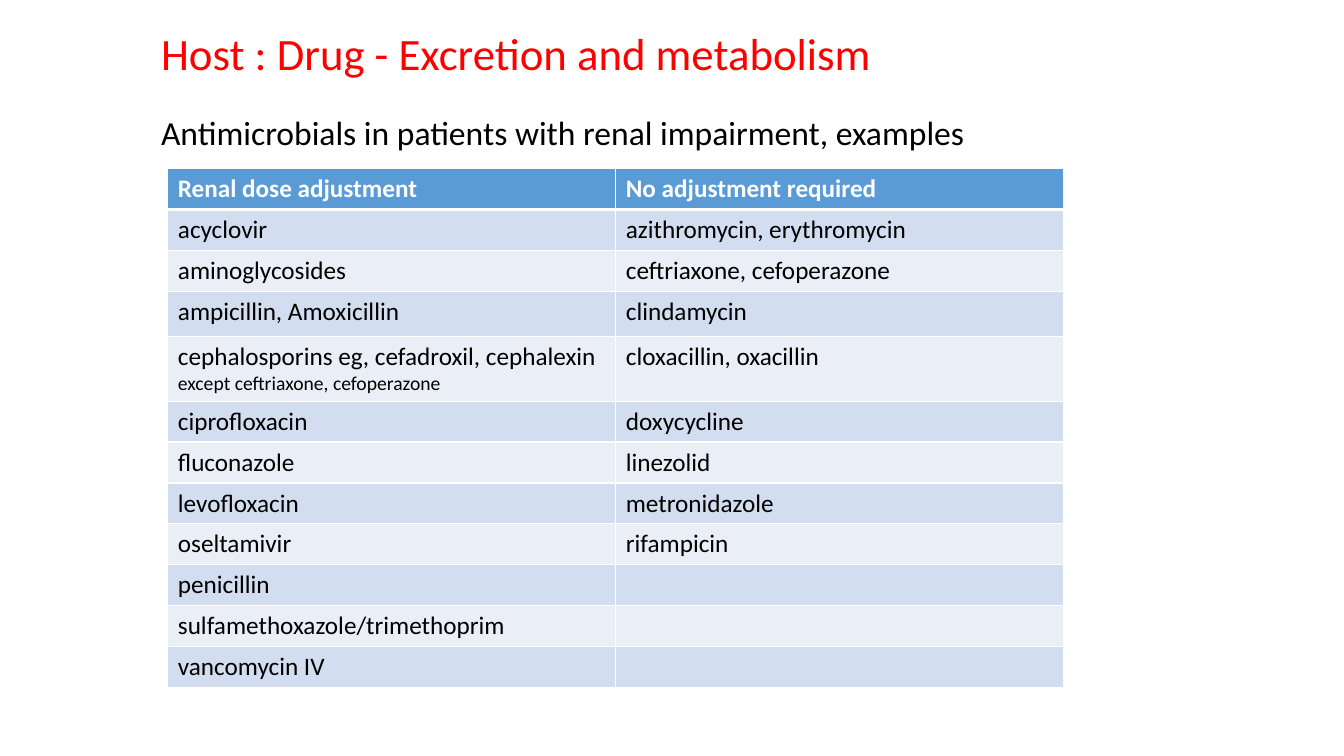
"""Build a slide listing antimicrobials by need for renal dose adjustment."""
from lxml.etree import SubElement
from pptx import Presentation
from pptx.dml.color import RGBColor as Rgb
from pptx.enum.text import MSO_AUTO_SIZE as AutoSize
from pptx.oxml.ns import qn
from pptx.util import Cm, Pt

COLORS = {
    "title": "FF0000", "text": "000000", "white": "FFFFFF",
    "header": "5B9BD5", "odd": "D2DEEF", "even": "EAEFF7",
}
DRUGS = [
    (["Renal dose adjustment"], ["No adjustment required"]),
    (["acyclovir"], ["azithromycin, erythromycin"]),
    (["aminoglycosides"], ["ceftriaxone, cefoperazone"]),
    (["ampicillin, Amoxicillin"], ["clindamycin"]),
    (["cephalosporins eg, cefadroxil, cephalexin",
      "except ceftriaxone, cefoperazone"], ["cloxacillin, oxacillin"]),
    (["ciprofloxacin"], ["doxycycline"]),
    (["fluconazole"], ["linezolid"]),
    (["levofloxacin"], ["metronidazole"]),
    (["oseltamivir"], ["rifampicin"]),
    (["penicillin"], []),
    (["sulfamethoxazole/trimethoprim"], []),
    (["vancomycin IV"], []),
]
ROW_HEIGHT = 1.03
SPECIAL_HEIGHTS = {3: 1.14, 4: 1.61}


class SlideBuilder:
    """Hold the style and the current slide."""

    def __init__(self, slide, font="Calibri"):
        self.slide = slide
        self.font = font

    def add_span(self, para, text, size, color, bold=False):
        span = para.add_run()
        span.text = text
        formats = {"name": self.font, "size": Pt(size), "bold": bold}
        for name, value in formats.items():
            setattr(span.font, name, value)
        span.font.color.rgb = Rgb.from_string(COLORS[color])

    def text(self, place, text, size, color, wrap=True):
        box = self.slide.shapes.add_textbox(*map(Cm, place))
        formats = {"word_wrap": wrap, "auto_size": AutoSize.SHAPE_TO_FIT_TEXT}
        for name, value in formats.items():
            setattr(box.text_frame, name, value)
        self.add_span(box.text_frame.paragraphs[0], text, size, color)

    def borders(self, cell, widths):
        properties = cell._tc.get_or_add_tcPr()
        for side, width in widths.items():
            line = SubElement(properties, qn(f"a:ln{side}"), w=str(Pt(width)))
            fill = SubElement(line, qn("a:solidFill"))
            SubElement(fill, qn("a:srgbClr"), val=COLORS["white"])

    def cell(self, cell, lines, row):
        header = row == 0
        self.borders(cell, {"L": 1, "R": 1, "T": 3 if row == 1 else 1,
                            "B": 3 if header else 1})
        shade = "header" if header else "odd" if row % 2 else "even"
        cell.fill.solid()
        cell.fill.fore_color.rgb = Rgb.from_string(COLORS[shade])
        frame = cell.text_frame
        for index, text in enumerate(lines):
            para = frame.add_paragraph() if index else frame.paragraphs[0]
            self.add_span(para, text, 14 if index else 18,
                          "white" if header else "text", header)

    def table(self, left, top, column_width, rows):
        heights = [SPECIAL_HEIGHTS.get(row, ROW_HEIGHT) for row in range(len(rows))]
        columns = len(rows[0])
        table = self.slide.shapes.add_table(
            len(rows), columns, Cm(left), Cm(top),
            Cm(column_width * columns), Cm(sum(heights))).table
        for column in table.columns:
            column.width = Cm(column_width)
        for row, entries in enumerate(rows):
            table.rows[row].height = Cm(heights[row])
            for column, lines in enumerate(entries):
                self.cell(table.cell(row, column), lines, row)


def main():
    deck = Presentation()
    deck.slide_width, deck.slide_height = Cm(33.87), Cm(19.05)
    page = SlideBuilder(deck.slides.add_slide(deck.slide_layouts[6]))
    page.table(4.23, 4.25, 11.29, DRUGS)
    page.text((3.81, 2.69, 21.08, 1.28),
              "Antimicrobials in patients with renal impairment, examples", 24, "text")
    page.text((3.81, 0.53, 18.49, 1.62),
              "Host : Drug - Excretion and metabolism", 32, "title", wrap=False)
    deck.save("out.pptx")


if __name__ == "__main__":
    main()
